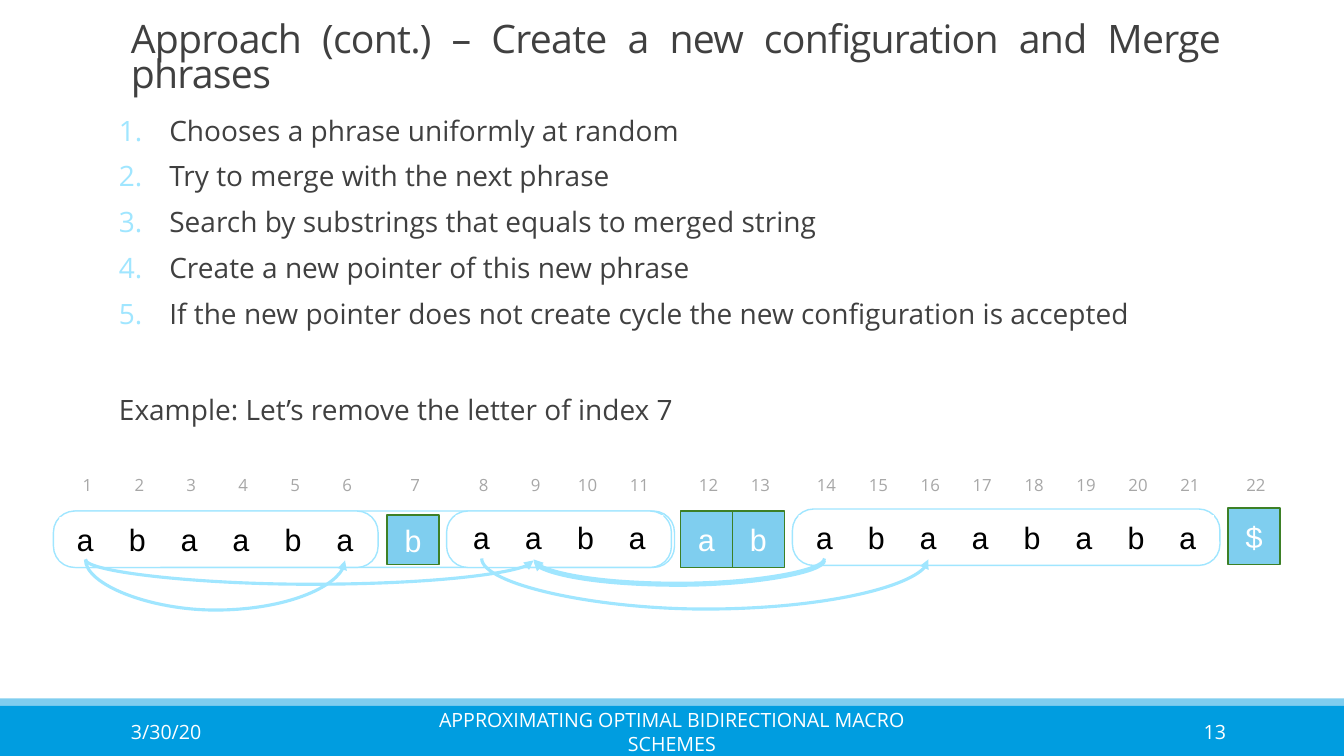
from dataclasses import dataclass

from lxml.etree import SubElement
from pptx import Presentation
from pptx.dml.color import RGBColor
from pptx.enum.shapes import MSO_CONNECTOR, MSO_SHAPE
from pptx.enum.text import MSO_ANCHOR, PP_ALIGN
from pptx.oxml.ns import qn
from pptx.util import Inches, Pt

WIDTH, HEIGHT = 13.33, 7.5
CELL = 0.515
RISE = 0.01
BLUE, SKY, PALE, GREEN = "009DE0", "7FCEEF", "A0E6FF", "3D8026"
WHITE, BLACK, INK, GREY = "FFFFFF", "000000", "404040", "A7A7A7"
SANS, MONO = "Open Sans", "Courier New"

STEPS = [
    "Chooses a phrase uniformly at random",
    "Try to merge with the next phrase",
    "Search by substrings that equals to merged string",
    "Create a new pointer of this new phrase",
    "If the new pointer does not create cycle the new configuration is accepted",
]
EXAMPLE = "Example: Let’s remove the letter of index 7"


@dataclass
class Box:
    """A rectangle on the slide, in inches."""
    left: float
    top: float
    width: float
    height: float

    def inner(self, left, top, width, height):
        """Return a box placed relative to this one."""
        return Box(self.left + left, self.top + top, width, height)

    def lengths(self):
        """Return the four sides as slide lengths."""
        return [Inches(side) for side in (self.left, self.top, self.width, self.height)]


@dataclass
class Phrase:
    """A run of letters: its first cell and, when it is a copy, its frame."""
    letters: str
    cells: Box
    frame: Box = None


STRIP = Box(0.53, 4.4, 12.19, 1.67)
MERGED = STRIP.inner(0.02, 0.67, 6.14, 0.56)
PHRASES = [
    Phrase("abaaba", STRIP.inner(0.06, 0.73, CELL, 0.43), STRIP.inner(0, 0.67, 3.22, 0.56)),
    Phrase("b", STRIP.inner(3.31, 0.71, CELL, 0.49)),
    Phrase("aaba", STRIP.inner(3.99, 0.71, CELL, 0.43), STRIP.inner(3.9, 0.67, 2.23, 0.56)),
    Phrase("ab", STRIP.inner(6.22, 0.67, CELL, 0.56)),
    Phrase("abaababa", STRIP.inner(7.39, 0.71, CELL, 0.43), STRIP.inner(7.33, 0.65, 4.24, 0.56)),
    Phrase("$", STRIP.inner(11.65, 0.64, CELL, 0.56)),
]
POINTERS = [(1, 6, 1.15, 0.51), (8, 16, 1.14, 0.51), (14, 9, 1.14, 0.25),
            (1, 9, 1.15, 0.25), (14, 9, 1.16, 0.25)]


def color(code):
    """Turn a hex string into a colour."""
    return RGBColor.from_string(code)


def write(para, text, size, ink, font=SANS):
    """Add one run of text to a paragraph."""
    span = para.add_run()
    span.text = text
    span.font.size = Pt(size)
    span.font.name = font
    span.font.color.rgb = color(ink)
    return span


def draw_shape(page, box, fill, line=None, kind=MSO_SHAPE.RECTANGLE):
    """Add a flat shape with an optional outline."""
    shape = page.shapes.add_shape(kind, *box.lengths())
    shape.shadow.inherit = False
    shape.fill.solid()
    shape.fill.fore_color.rgb = color(fill)
    if line:
        shape.line.color.rgb = color(line)
        shape.line.width = Pt(1)
    else:
        shape.line.fill.background()
    return shape


def draw_cell(page, box, text, size, ink, font, fill, line=None, anchor=MSO_ANCHOR.MIDDLE):
    """Add a square that holds one letter or index."""
    frame = draw_shape(page, box, fill, line).text_frame
    frame.margin_left = frame.margin_right = Inches(0.05)
    frame.margin_top = frame.margin_bottom = Inches(0.05)
    frame.vertical_anchor = anchor
    frame.paragraphs[0].alignment = PP_ALIGN.CENTER
    write(frame.paragraphs[0], text, size, ink, font)


def draw_frame(page, box):
    """Add the rounded outline of a phrase."""
    draw_shape(page, box, WHITE, PALE, MSO_SHAPE.ROUNDED_RECTANGLE).adjustments[0] = 0.375


def add_text_frame(page, box, anchor=MSO_ANCHOR.MIDDLE):
    """Add a wrapping text box and return its frame."""
    frame = page.shapes.add_textbox(*box.lengths()).text_frame
    frame.word_wrap = True
    frame.vertical_anchor = anchor
    return frame


def draw_title(page, box):
    """Place the justified heading."""
    para = add_text_frame(page, box).paragraphs[0]
    para.alignment = PP_ALIGN.JUSTIFY
    para.line_spacing = 0.75
    text = "Approach (cont.) – Create a new configuration and Merge phrases"
    span = write(para, text, 28, INK)
    span.font._element.set("spc", "-50")


def draw_steps(page, box):
    """Place the numbered steps and the example sentence."""
    frame = add_text_frame(page, box, MSO_ANCHOR.TOP)
    frame.margin_left = frame.margin_right = 0
    for number, text in enumerate(STEPS + [EXAMPLE]):
        para = frame.add_paragraph() if number else frame.paragraphs[0]
        para.alignment = PP_ALIGN.JUSTIFY
        para.line_spacing = 0.9
        para.space_before = Pt(45.3 if text == EXAMPLE else 9.6)
        para.space_after = Pt(1.6)
        write(para, text, 20, INK)
        if text != EXAMPLE:
            settings = para._p.get_or_add_pPr()
            settings.set("marL", str(Inches(0.5)))
            settings.set("indent", str(Inches(-0.5)))
            tint = SubElement(settings, qn("a:buClr"))
            SubElement(tint, qn("a:srgbClr"), val=PALE)
            SubElement(settings, qn("a:buAutoNum"), type="arabicPeriod")


def draw_pointer(page, start, end, top, depth):
    """Draw an arrow that hangs below the strip from one column to another."""
    span = abs(end - start)
    turned = Box((start + end - RISE) / 2, top + (RISE - span) / 2, RISE, span)
    left, upper, width, height = turned.lengths()
    arrow = page.shapes.add_connector(
        MSO_CONNECTOR.CURVE, left, upper, left + width, upper + height)
    arrow.line.color.rgb = color(PALE)
    arrow.line.width = Pt(2.25)
    SubElement(arrow.line._get_or_add_ln(), qn("a:tailEnd"), type="triangle")
    properties = arrow._element.spPr
    SubElement(properties, qn("a:effectLst"))
    transform = properties.find(qn("a:xfrm"))
    transform.set("rot", str((270 if end > start else 90) * 60000))
    if end > start:
        transform.set("flipH", "1")
    guides = properties.find(qn("a:prstGeom")).find(qn("a:avLst"))
    SubElement(guides, qn("a:gd"), name="adj1", fmla=f"val {round(depth / RISE * 100000)}")


def draw_strip(page, box):
    """Place the phrases, their pointers and the row of indices."""
    draw_frame(page, MERGED)
    columns = []
    for phrase in PHRASES:
        if phrase.frame:
            draw_frame(page, phrase.frame)
        ink, fill, line = (BLACK, WHITE, None) if phrase.frame else (WHITE, SKY, GREEN)
        for place, letter in enumerate(phrase.letters):
            cell = phrase.cells.inner(place * CELL, 0, CELL, phrase.cells.height)
            draw_cell(page, cell, letter, 22, ink, MONO, fill, line)
            columns.append(cell.left)
    for source, target, drop, depth in POINTERS:
        start, end = (columns[index - 1] + CELL / 2 for index in (source, target))
        draw_pointer(page, start, end, box.top + drop, depth)
    for index, left in enumerate(columns, 1):
        label = Box(left + 0.02, box.top, CELL, 0.56)
        draw_cell(page, label, str(index), 12, GREY, SANS, WHITE, anchor=MSO_ANCHOR.BOTTOM)


def draw_footer(page, box):
    """Place the coloured bands with date, title and page number."""
    draw_shape(page, box, BLUE)
    band = draw_shape(page, box.inner(0, -0.07, box.width, 0.07), BLUE)
    tint = band._element.spPr.find(qn("a:solidFill")).find(qn("a:srgbClr"))
    SubElement(tint, qn("a:alpha"), val="50000")
    for left, width, align, text in (
            (1.2, 2.7, PP_ALIGN.LEFT, "3/30/20"),
            (4.03, 5.27, PP_ALIGN.CENTER, "APPROXIMATING OPTIMAL BIDIRECTIONAL MACRO SCHEMES"),
            (10.83, 1.43, PP_ALIGN.RIGHT, "13")):
        para = add_text_frame(page, box.inner(left, 0.06, width, 0.4)).paragraphs[0]
        para.alignment = align
        write(para, text, 14, WHITE)


def main():
    """Build the slide and save it."""
    deck = Presentation()
    deck.slide_width, deck.slide_height = Inches(WIDTH), Inches(HEIGHT)
    page = deck.slides.add_slide(deck.slide_layouts[6])
    draw_footer(page, Box(0, 7, WIDTH, 0.5))
    draw_title(page, Box(1.2, 0.29, 11, 0.62))
    draw_steps(page, Box(1.18, 1.11, 11, 4.84))
    draw_strip(page, STRIP)
    deck.save("out.pptx")


if __name__ == "__main__":
    main()
